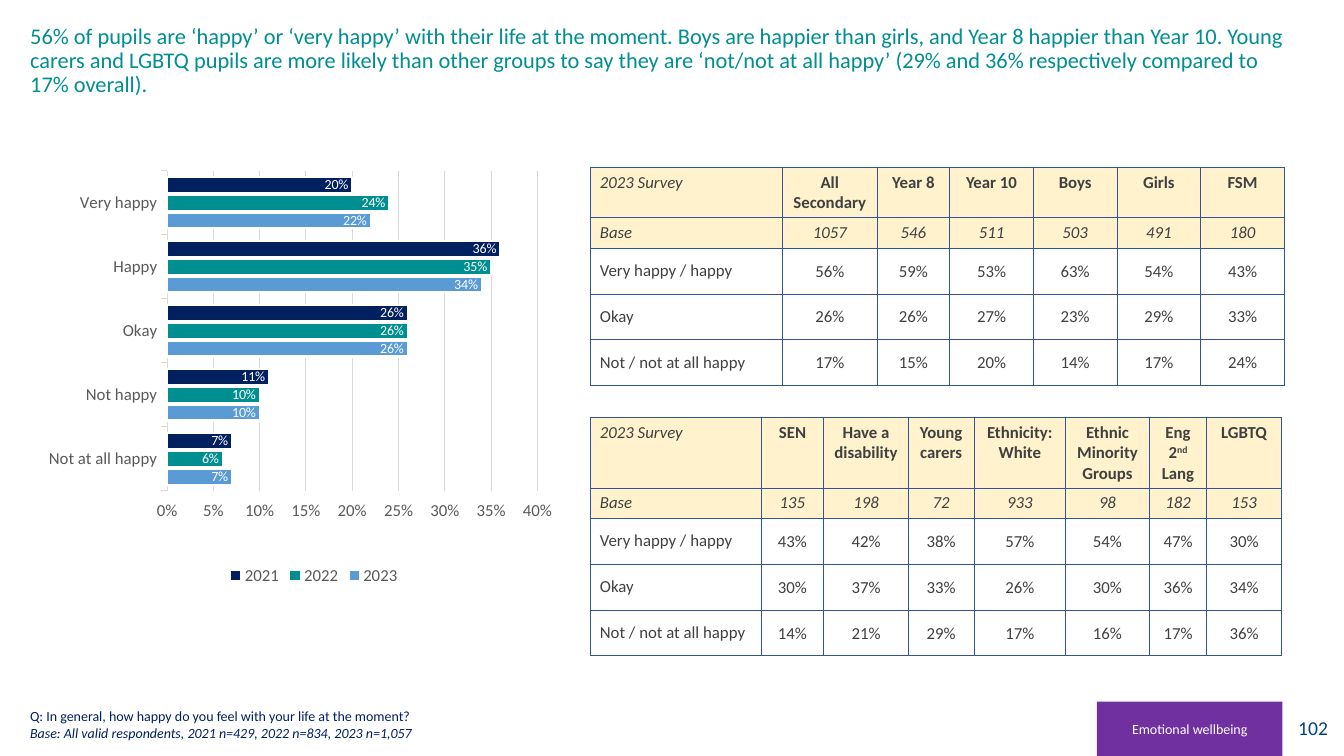
from pptx import Presentation
from pptx.chart.data import CategoryChartData as Data
from pptx.dml.color import RGBColor
from pptx.enum.chart import XL_CHART_TYPE as Kind, XL_LABEL_POSITION as Spot
from pptx.enum.chart import XL_LEGEND_POSITION as Side, XL_TICK_MARK as Tick
from pptx.enum.shapes import MSO_SHAPE as Shape
from pptx.enum.text import MSO_ANCHOR as Anchor, PP_ALIGN as Align
from pptx.oxml import parse_xml
from pptx.oxml.ns import nsdecls
from pptx.util import Inches, Pt

FACE = "Calibri"
NAVY, TEAL, BLUE = "002060", "008E91", "5B9BD5"
WHITE, GREY, DARK, RULE = "FFFFFF", "595959", "404040", "D9D9D9"
CREAM, EDGE, PLUM, INK = "FFF2CC", "2F5597", "7030A0", "004376"

MOODS = ["Not at all happy", "Not happy", "Okay", "Happy", "Very happy"]
YEARS = [
    ("2023", BLUE, [0.07, 0.10, 0.26, 0.34, 0.22]),
    ("2022", TEAL, [0.06, 0.10, 0.26, 0.35, 0.24]),
    ("2021", NAVY, [0.07, 0.11, 0.26, 0.36, 0.20]),
]
LABELS = ["2023 Survey", "Base", "Very happy / happy", "Okay", "Not / not at all happy"]
PUPILS = {
    "top": 1.66, "head": 0.5,
    "cols": [1.91, 0.94, 0.72, 0.83, 0.83, 0.83, 0.83],
    "rows": [
        ["All Secondary", "Year 8", "Year 10", "Boys", "Girls", "FSM"],
        ["1057", "546", "511", "503", "491", "180"],
        ["56%", "59%", "53%", "63%", "54%", "43%"],
        ["26%", "26%", "27%", "23%", "29%", "33%"],
        ["17%", "15%", "20%", "14%", "17%", "24%"],
    ],
}
GROUPS = {
    "top": 4.14, "head": 0.7,
    "cols": [1.7, 0.62, 0.84, 0.65, 0.91, 0.83, 0.57, 0.74],
    "rows": [
        ["SEN", "Have a disability", "Young carers", "Ethnicity: White",
         "Ethnic Minority Groups", "Eng 2|nd| Lang", "LGBTQ"],
        ["135", "198", "72", "933", "98", "182", "153"],
        ["43%", "42%", "38%", "57%", "54%", "47%", "30%"],
        ["30%", "37%", "33%", "26%", "30%", "36%", "34%"],
        ["14%", "21%", "29%", "17%", "16%", "17%", "36%"],
    ],
}


def put(thing, vals):
    for name, val in vals.items():
        setattr(thing, name, val)


def tint(code):
    return RGBColor.from_string(code)


def paint(fill, code):
    fill.solid()
    fill.fore_color.rgb = tint(code)


def style(font, size, code, **more):
    put(font, {"name": FACE, "size": Pt(size), **more})
    font.color.rgb = tint(code)


def draw(line, code, width):
    line.color.rgb = tint(code)
    line.width = Pt(width)


def write(para, text, size, code, align=Align.LEFT, **more):
    para.alignment = align
    for num, part in enumerate(text.split("|")):
        run = para.add_run()
        run.text = part
        style(run.font, size, code, **more)
        if num % 2:
            run._r.get_or_add_rPr().set("baseline", "30000")


def add_title(slide, text):
    title = slide.shapes.title
    put(title, {"left": Inches(0.2), "top": Inches(0.2),
                "width": Inches(12.65), "height": Inches(0.98)})
    put(title.text_frame, {"word_wrap": True, "vertical_anchor": Anchor.TOP})
    para = title.text_frame.paragraphs[0]
    para.line_spacing = 0.9
    write(para, text, 16, TEAL)


def add_box(slide, area, fill, text, size, code, align):
    box = slide.shapes.add_shape(Shape.RECTANGLE, *map(Inches, area))
    box.shadow.inherit = False
    paint(box.fill, fill)
    box.line.fill.background()
    put(box.text_frame, {"word_wrap": True, "vertical_anchor": Anchor.MIDDLE})
    write(box.text_frame.paragraphs[0], text, size, code, align)


def add_note(slide, area, ask, base):
    frame = slide.shapes.add_textbox(*map(Inches, area)).text_frame
    put(frame, {"word_wrap": True, "vertical_anchor": Anchor.BOTTOM})
    write(frame.paragraphs[0], ask, 10, NAVY)
    write(frame.add_paragraph(), base, 10, NAVY, italic=True)


def place_plot(chart, spots):
    marks = "".join(f'<c:{key} val="{val}"/>' for key, val in spots.items())
    plot = chart._chartSpace.chart.plotArea
    for old in plot.findall("{*}layout"):
        plot.remove(old)
    plot.insert(0, parse_xml(
        f'<c:layout {nsdecls("c")}><c:manualLayout><c:layoutTarget val="inner"/>'
        f'<c:xMode val="edge"/><c:yMode val="edge"/>{marks}</c:manualLayout></c:layout>'))


def add_bars(slide, area):
    data = Data(number_format="0%")
    data.categories = MOODS
    for year, _, vals in YEARS:
        data.add_series(year, vals)
    chart = slide.shapes.add_chart(Kind.BAR_CLUSTERED, *map(Inches, area), data).chart
    put(chart, {"has_title": False, "has_legend": True})
    style(chart.font, 10, "000000")
    put(chart.legend, {"position": Side.BOTTOM, "include_in_layout": False})
    style(chart.legend.font, 12, GREY)
    cats, vals = chart.category_axis, chart.value_axis
    for axis in (cats, vals):
        axis.major_tick_mark = Tick.OUTSIDE
        style(axis.tick_labels.font, 12, GREY)
    draw(cats.format.line, RULE, 0.75)
    put(vals, {"minimum_scale": 0, "maximum_scale": 0.4, "major_unit": 0.05,
               "has_major_gridlines": True})
    vals.format.line.fill.background()
    draw(vals.major_gridlines.format.line, RULE, 0.75)
    put(vals.tick_labels, {"number_format": "0%", "number_format_is_linked": False})
    plot = chart.plots[0]
    put(plot, {"gap_width": 80, "overlap": -12, "vary_by_categories": False})
    for bars, (_, code, _) in zip(plot.series, YEARS):
        paint(bars.format.fill, code)
        draw(bars.format.line, WHITE, 1.5)
        tags = bars.data_labels
        put(tags, {"show_value": True, "position": Spot.INSIDE_END,
                   "number_format": "0%", "number_format_is_linked": False})
        style(tags.font, 10, WHITE)
    place_plot(chart, {"x": 0.25, "y": 0.15, "w": 0.63, "h": 0.65})


def edge_cell(cell):
    props = cell._tc.get_or_add_tcPr()
    for side in "LRTB":
        props.append(parse_xml(
            f'<a:ln{side} {nsdecls("a")} w="{Pt(0.5)}"><a:solidFill>'
            f'<a:srgbClr val="{EDGE}"/></a:solidFill></a:ln{side}>'))


def fill_cell(cell, row, col, text):
    edge_cell(cell)
    if row < 2:
        paint(cell.fill, CREAM)
    else:
        cell.fill.background()
    cell.vertical_anchor = Anchor.MIDDLE if row else Anchor.TOP
    if row > 1 and col:
        thin = Inches(0.01)
        put(cell, {"margin_left": thin, "margin_right": thin,
                   "margin_top": thin, "margin_bottom": 0})
    write(cell.text_frame.paragraphs[0], text, 12, DARK,
          Align.CENTER if col else Align.LEFT,
          bold=row == 0 and col > 0, italic=row == 1 or row + col == 0)


def add_grid(slide, top, head, cols, rows):
    highs = [head, 0.3] + [0.455] * 3
    area = (5.85, top, sum(cols), sum(highs))
    table = slide.shapes.add_table(len(rows), len(cols), *map(Inches, area)).table
    put(table, {"first_row": False, "horz_banding": False})
    for col, wide in zip(table.columns, cols):
        col.width = Inches(wide)
    for row, (high, label, vals) in enumerate(zip(highs, LABELS, rows)):
        table.rows[row].height = Inches(high)
        for col, text in enumerate([label] + vals):
            fill_cell(table.cell(row, col), row, col, text)


def main():
    deck = Presentation()
    put(deck, {"slide_width": Inches(13.33), "slide_height": Inches(7.5)})
    slide = deck.slides.add_slide(deck.slide_layouts[5])
    add_box(slide, (12.68, 6.95, 0.59, 0.54), WHITE, "102", 14, INK, Align.RIGHT)
    add_title(slide, "56% of pupils are ‘happy’ or ‘very happy’ with their life at the moment. "
              "Boys are happier than girls, and Year 8 happier than Year 10. Young carers and "
              "LGBTQ pupils are more likely than other groups to say they are ‘not/not at all "
              "happy’ (29% and 36% respectively compared to 17% overall).")
    add_bars(slide, (0.2, 0.96, 5.83, 4.89))
    add_note(slide, (0.2, 6.96, 11.19, 0.44),
             "Q: In general, how happy do you feel with your life at the moment?",
             "Base: All valid respondents, 2021 n=429, 2022 n=834, 2023 n=1,057")
    add_box(slide, (10.88, 6.96, 1.84, 0.54), PLUM, "Emotional wellbeing", 10, WHITE, Align.CENTER)
    for grid in (PUPILS, GROUPS):
        add_grid(slide, **grid)
    deck.save("out.pptx")


if __name__ == "__main__":
    main()
